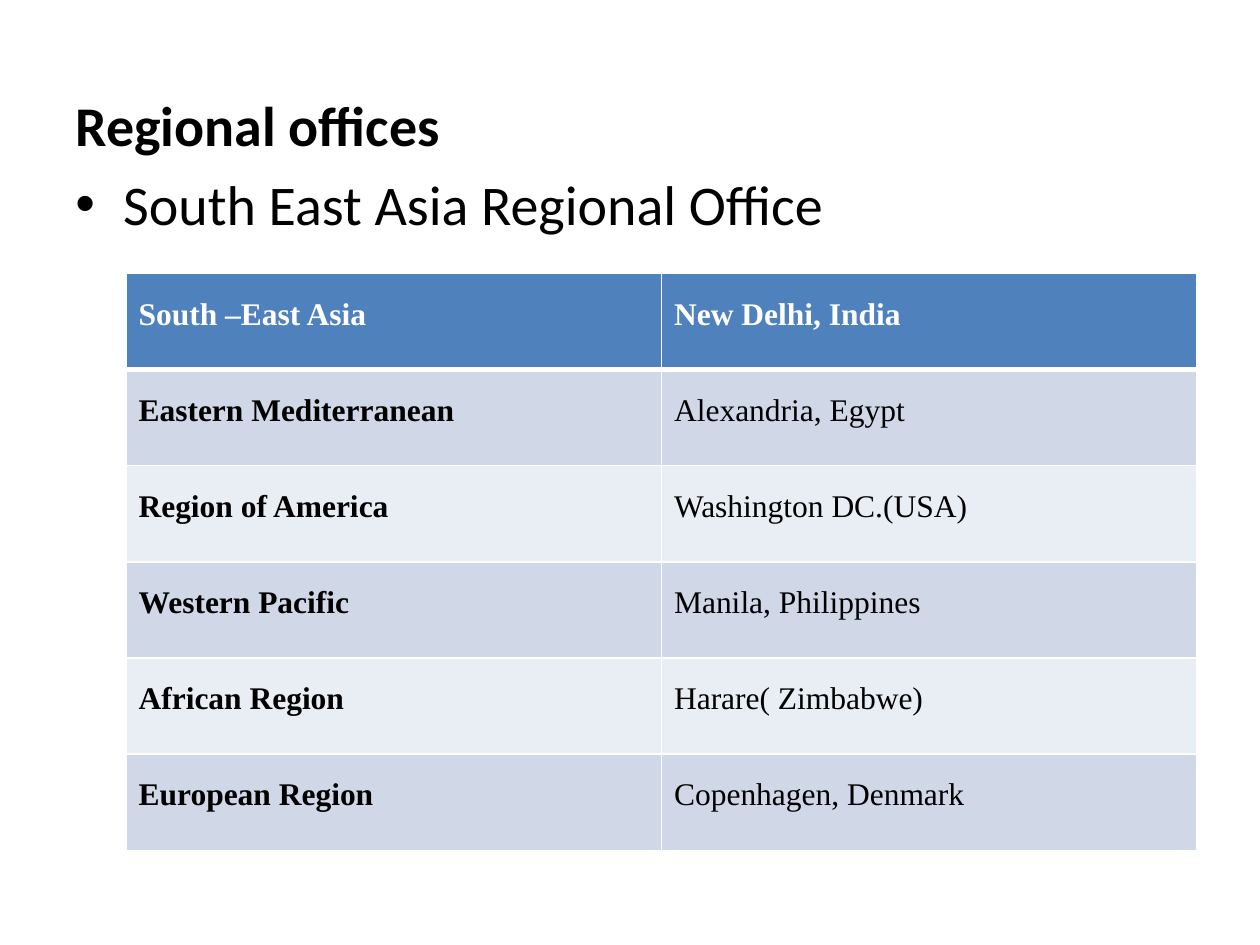
from pptx import Presentation
from pptx.dml.color import RGBColor
from pptx.enum.text import PP_ALIGN as Align
from pptx.oxml.xmlchemy import OxmlElement as Element
from pptx.util import Inches, Pt


def color(hex_code):
    return RGBColor.from_string(hex_code)


def style(run, hex_code, **formats):
    for name, value in formats.items():
        setattr(run.font, name, value)
    run.font.color.rgb = color(hex_code)


deck = Presentation()
deck.slide_width, deck.slide_height = Inches(10), Inches(7.5)
slide = deck.slides.add_slide(deck.slide_layouts[6])

# Heading and bullet line
intro = slide.shapes.add_textbox(Inches(0.5), Inches(0.67), Inches(9), Inches(1.4)).text_frame
intro.word_wrap = True
intro_lines = [("Regional offices", True, None), ("South East Asia Regional Office", False, "•")]
for i, (text, bold, bullet) in enumerate(intro_lines):
    line = intro.paragraphs[0] if i == 0 else intro.add_paragraph()
    line.space_before = Pt(6.4)
    indent = line._p.get_or_add_pPr()
    indent.set("marL", str(Inches(0.38)))
    indent.set("indent", str(Inches(-0.38)))
    if bullet:
        bullet_font = Element("a:buFont")
        bullet_font.set("typeface", "Arial")
        bullet_char = Element("a:buChar")
        bullet_char.set("char", bullet)
        indent.extend([bullet_font, bullet_char])
    run = line.add_run()
    run.text = text
    style(run, "000000", name="Calibri", size=Pt(32), bold=bold)

# Regions and the cities of their offices
offices = [
    ("South –East Asia", "New Delhi, India"),
    ("Eastern Mediterranean", "Alexandria, Egypt"),
    ("Region of America", "Washington DC.(USA)"),
    ("Western Pacific", "Manila, Philippines"),
    ("African Region", "Harare( Zimbabwe) "),
    ("European Region", "Copenhagen, Denmark "),
]
office_table = slide.shapes.add_table(
    len(offices), 2, Inches(1), Inches(2.17), Inches(8.5), Inches(4.58)).table

for r, office in enumerate(offices):
    header = r == 0
    fill = "4F81BD" if header else ("E9EDF4", "D0D8E8")[r % 2]
    for c, text in enumerate(office):
        cell = office_table.cell(r, c)

        # White borders, thick between the header and the body
        borders = {"L": 1, "R": 1, "T": 3 if r == 1 else 1, "B": 3 if header else 1}
        for side, width in borders.items():
            border = Element(f"a:ln{side}")
            border.set("w", str(Pt(width)))
            border_fill = Element("a:solidFill")
            border_color = Element("a:srgbClr")
            border_color.set("val", "FFFFFF")
            border_fill.append(border_color)
            border.append(border_fill)
            cell._tc.get_or_add_tcPr().append(border)

        cell.fill.solid()
        cell.fill.fore_color.rgb = color(fill)
        line = cell.text_frame.paragraphs[0]
        line.alignment = Align.JUSTIFY
        line.line_spacing = 1.5
        run = line.add_run()
        run.text = text
        style(run, "FFFFFF" if header else "000000",
              name="Times New Roman", size=Pt(18), bold=header or c == 0)

deck.save("out.pptx")
